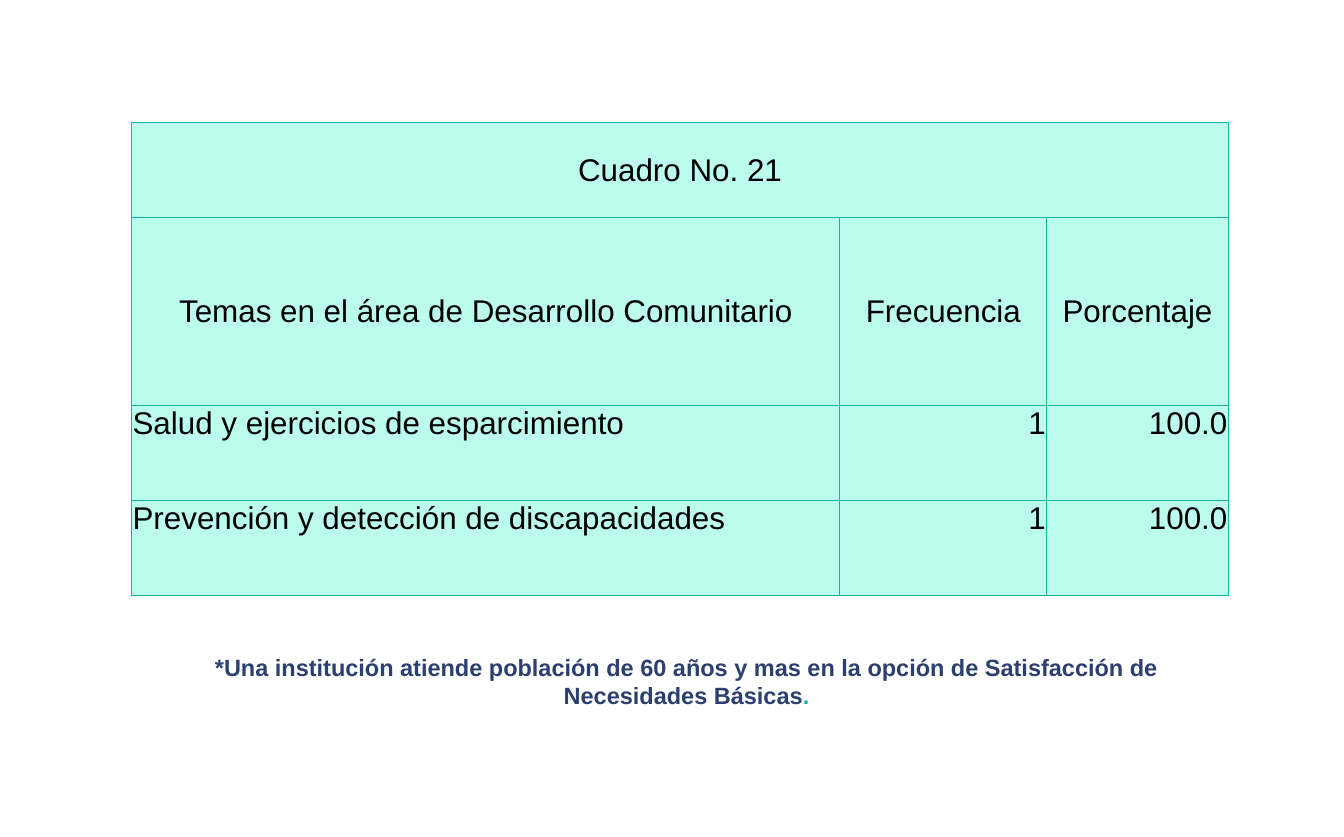
from lxml.etree import SubElement
from pptx import Presentation
from pptx.dml.color import RGBColor
from pptx.enum.text import MSO_ANCHOR as ANCHOR, PP_ALIGN as ALIGN
from pptx.oxml.ns import qn
from pptx.util import Inches, Pt

TITLE = "Cuadro No. 21"
HEADER = ["Temas en el área de Desarrollo Comunitario", "Frecuencia", "Porcentaje"]
TOPICS = [
    ["Salud y ejercicios de esparcimiento", "1", "100.0"],
    ["Prevención y detección de discapacidades", "1", "100.0"],
]
NOTE = [
    ("*Una institución atiende población de 60 años y mas en la opción de "
     "Satisfacción de Necesidades Básicas", "note"),
    (".", "stop"),
]
COLORS = {"fill": "BBFCEE", "border": "16B39E", "text": "000000",
          "note": "2C3F71", "stop": "1AB39F"}
COLS = [7.53, 2.2, 1.93]
ROW = 1.01
ROWS = [ROW, 2, ROW, ROW]
CELL = {"margin_left": Inches(0.01), "margin_right": Inches(0.01),
        "margin_top": Inches(0.01), "margin_bottom": 0}


def add_run(p, text, color, size, bold=False):
    r = p.add_run()
    r.text = text
    for name, value in {"name": "Arial", "size": Pt(size), "bold": bold}.items():
        setattr(r.font, name, value)
    r.font.color.rgb = RGBColor.from_string(COLORS[color])


def add_borders(cell):
    tcPr = cell._tc.get_or_add_tcPr()
    for i, side in enumerate(("lnL", "lnR", "lnT", "lnB")):
        ln = SubElement(tcPr, qn(f"a:{side}"), w=str(Pt(0.75)))
        fill = SubElement(ln, qn("a:solidFill"))
        SubElement(fill, qn("a:srgbClr"), val=COLORS["border"])
        tcPr.remove(ln)
        tcPr.insert(i, ln)


def format_cell(cell, text, align, anchor):
    for name, value in {**CELL, "vertical_anchor": anchor}.items():
        setattr(cell, name, value)
    cell.fill.solid()
    cell.fill.fore_color.rgb = RGBColor.from_string(COLORS["fill"])
    add_borders(cell)
    p = cell.text_frame.paragraphs[0]
    p.alignment = align
    if text:
        add_run(p, text, "text", 24)


def add_topics_table(s):
    data = [[TITLE, "", ""], HEADER, *TOPICS]
    table = s.shapes.add_table(len(ROWS), len(COLS), Inches(1.4), Inches(1.3),
                               Inches(sum(COLS)), Inches(sum(ROWS))).table
    for col, width in zip(table.columns, COLS):
        col.width = Inches(width)
    for row, height in zip(table.rows, ROWS):
        row.height = Inches(height)
    for i, texts in enumerate(data):
        for j, text in enumerate(texts):
            if i < 2:
                align, anchor = ALIGN.CENTER, ANCHOR.MIDDLE
            else:
                align, anchor = (ALIGN.RIGHT if j else ALIGN.LEFT), ANCHOR.TOP
            format_cell(table.cell(i, j), text, align, anchor)
    table.cell(0, 0).merge(table.cell(0, len(COLS) - 1))


def add_note(s):
    sp = s.shapes.add_textbox(Inches(1.55), Inches(6.89), Inches(11.5), Inches(0.71))
    tf = sp.text_frame
    tf.word_wrap = True
    p = tf.paragraphs[0]
    p.alignment = ALIGN.CENTER
    for text, color in NOTE:
        add_run(p, text, color, 18, bold=True)


def main():
    prs = Presentation()
    prs.slide_width, prs.slide_height = Inches(14.29), Inches(8.9)
    s = prs.slides.add_slide(prs.slide_layouts[6])
    add_topics_table(s)
    add_note(s)
    prs.save("out.pptx")


if __name__ == "__main__":
    main()
